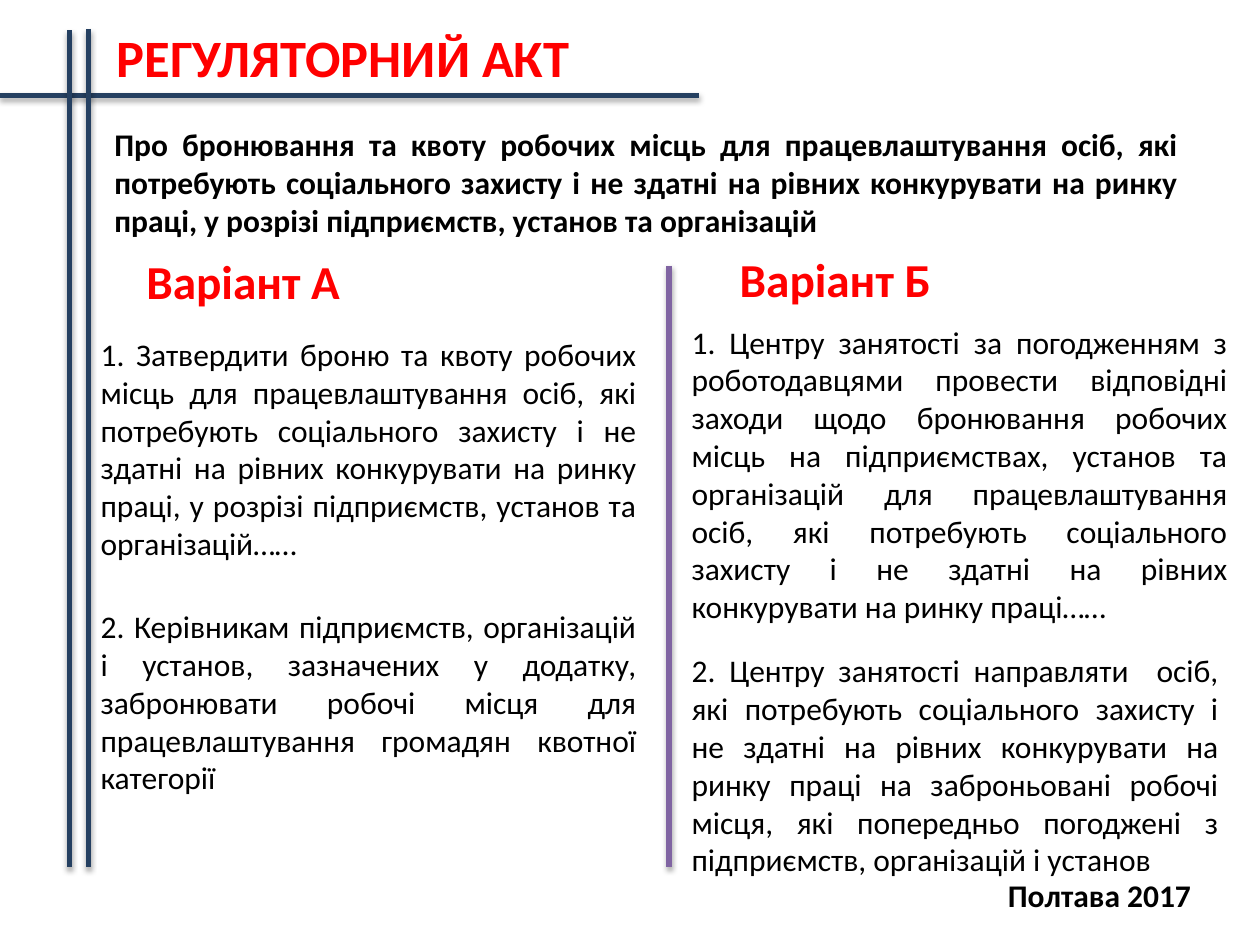
from dataclasses import dataclass

from lxml import etree
from pptx import Presentation
from pptx.dml.color import RGBColor
from pptx.enum import shapes, text
from pptx.oxml import ns
from pptx.util import Inches, Pt

COLORS = {"navy": "254061", "purple": "8064A2", "red": "FF0000", "black": "000000"}
FONT = "Calibri"
LEFT_COLUMN, RIGHT_COLUMN, COLUMN_WIDTH = 0.7, 5.39, 4.45
LINE_BOTTOM = 6.88


@dataclass
class Rule:
    start: tuple[float, float]
    end: tuple[float, float]
    color: str = "navy"


@dataclass
class TextBlock:
    content: str
    box: tuple[float, float, float, float]  # left, top, width, height
    size: float = 18
    color: str = "black"
    bold: bool = False
    centered: bool = False
    wrap: bool = True
    middle: bool = False
    bottom_inset: float = 0.05


TITLE = TextBlock("РЕГУЛЯТОРНИЙ АКТ ", (0.81, 0.15, 3.92, 0.61), size=30,
                  color="red", bold=True, centered=True, wrap=False)

RULES = [
    Rule((0, 0.76), (5.55, 0.76)),
    Rule((0.55, 0.24), (0.55, LINE_BOTTOM)),
    Rule((0.7, 0.23), (0.7, LINE_BOTTOM)),
    Rule((5.31, 2.11), (5.31, LINE_BOTTOM), "purple"),
]

HEADINGS = [
    TextBlock(content, box, size=27, color="red", bold=True, centered=True, wrap=False)
    for content, box in [
        ("Варіант А", (1.05, 1.95, 1.76, 0.56)),
        ("Варіант Б", (5.76, 1.94, 1.74, 0.56)),
    ]
]

BODY = [
    TextBlock("Про бронювання та квоту робочих місць для працевлаштування осіб, які "
              "потребують соціального захисту і не здатні на рівних конкурувати на ринку "
              "праці, у розрізі підприємств, установ та організацій",
              (0.81, 0.94, 8.64, 0.96), bold=True, middle=True, bottom_inset=0),
    TextBlock("1. Затвердити броню та квоту робочих місць для працевлаштування осіб, які "
              "потребують соціального захисту і не здатні на рівних конкурувати на ринку "
              "праці, у розрізі підприємств, установ та організацій……",
              (LEFT_COLUMN, 2.61, COLUMN_WIDTH, 1.92)),
    TextBlock("2. Керівникам підприємств, організацій і установ, зазначених у додатку, "
              "забронювати робочі місця для працевлаштування громадян квотної категорії",
              (LEFT_COLUMN, 4.77, COLUMN_WIDTH, 1.62)),
    TextBlock("1. Центру занятості за погодженням з роботодавцями провести відповідні "
              "заходи щодо бронювання робочих місць на підприємствах, установ та "
              "організацій для працевлаштування осіб, які потребують соціального захисту "
              "і не здатні на рівних конкурувати на ринку праці……",
              (RIGHT_COLUMN, 2.5, COLUMN_WIDTH, 2.52), middle=True),
    TextBlock("2. Центру занятості направляти  осіб, які потребують соціального захисту і "
              "не здатні на рівних конкурувати на ринку праці на заброньовані робочі "
              "місця, які попередньо погоджені з підприємств, організацій і установ",
              (RIGHT_COLUMN, 5.11, 4.38, 1.92), middle=True),
    TextBlock("Полтава 2017 ", (7.69, 6.9, 2.13, 0.4), bold=True, centered=True),
]


def format_text(frame, content: str, *, size: float, color: str, bold: bool,
                centered: bool, wrap: bool, middle: bool, bottom_inset: float) -> None:
    frame.word_wrap = wrap
    frame.auto_size = text.MSO_AUTO_SIZE.SHAPE_TO_FIT_TEXT
    frame.vertical_anchor = text.MSO_ANCHOR.MIDDLE if middle else text.MSO_ANCHOR.TOP
    frame.margin_left = frame.margin_right = Inches(0.1)
    frame.margin_top, frame.margin_bottom = Inches(0.05), Inches(bottom_inset)
    paragraph = frame.paragraphs[0]
    paragraph.alignment = text.PP_ALIGN.CENTER if centered else text.PP_ALIGN.JUSTIFY
    run = paragraph.add_run()
    run.text = content
    run.font.name = FONT
    run.font.size = Pt(size)
    run.font.bold = bold
    run.font.color.rgb = RGBColor.from_string(COLORS[color])


def fill_block(shape, block: TextBlock) -> None:
    shape.left, shape.top, shape.width, shape.height = map(Inches, block.box)
    format_text(shape.text_frame, block.content, size=block.size, color=block.color,
                bold=block.bold, centered=block.centered, wrap=block.wrap,
                middle=block.middle, bottom_inset=block.bottom_inset)


def draw_text(slide, block: TextBlock) -> None:
    fill_block(slide.shapes.add_textbox(*map(Inches, block.box)), block)


def draw_rule(slide, rule: Rule) -> None:
    connector = slide.shapes.add_connector(
        shapes.MSO_CONNECTOR.STRAIGHT, *map(Inches, rule.start + rule.end))
    connector.line.color.rgb = RGBColor.from_string(COLORS[rule.color])
    connector.line.width = Pt(3)
    # Soft shadow straight below the line
    effects = etree.SubElement(connector._element.spPr, ns.qn("a:effectLst"))
    shadow = etree.SubElement(effects, ns.qn("a:outerShdw"), blurRad=str(Pt(3.1)),
                              dist=str(Pt(1.8)), dir="5400000", rotWithShape="0")
    color = etree.SubElement(shadow, ns.qn("a:srgbClr"), val=COLORS["black"])
    etree.SubElement(color, ns.qn("a:alpha"), val="35000")


def main() -> None:
    presentation = Presentation()
    presentation.slide_width, presentation.slide_height = Inches(10), Inches(7.5)
    slide = presentation.slides.add_slide(presentation.slide_layouts[5])

    # Frame lines and column divider
    for rule in RULES:
        draw_rule(slide, rule)

    # Title, column headings and text
    fill_block(slide.shapes.title, TITLE)
    for block in HEADINGS + BODY:
        draw_text(slide, block)

    presentation.save("out.pptx")


if __name__ == "__main__":
    main()
